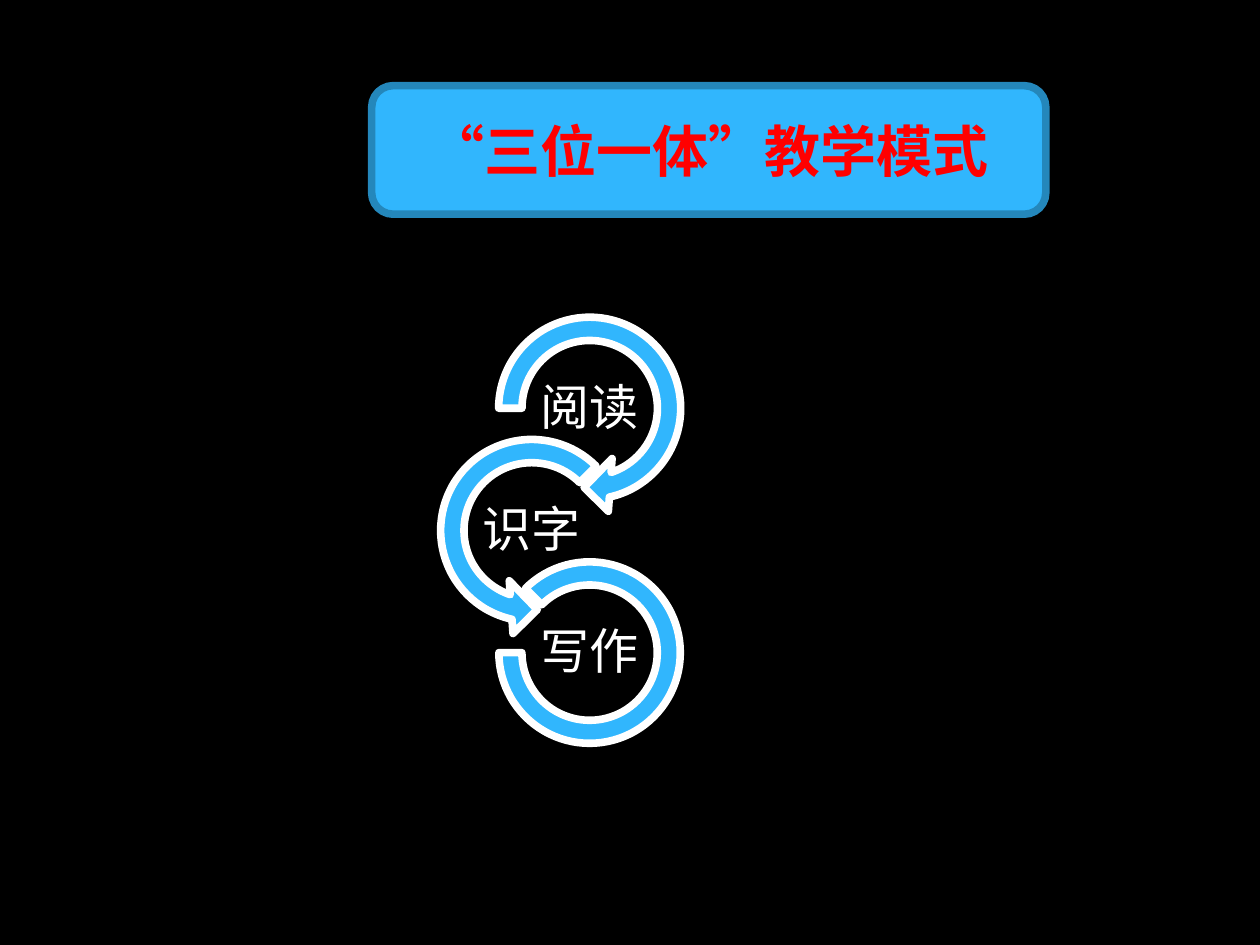
from pptx import Presentation
from pptx.dml.color import RGBColor
from pptx.enum import shapes, text
from pptx.util import Inches, Pt

BLACK = RGBColor(0x00, 0x00, 0x00)
WHITE = RGBColor(0xFF, 0xFF, 0xFF)
RED = RGBColor(0xFF, 0x00, 0x00)
SKY = RGBColor(0x31, 0xB6, 0xFD)
STEEL = RGBColor(0x24, 0x87, 0xBB)

OUTLINE = Pt(4.33)
LABEL_WIDTH, LABEL_HEIGHT = Inches(0.93), Inches(0.47)
STEP_GAP = Inches(0.97)

STEPS = [
    ("阅读", shapes.MSO_SHAPE.CIRCULAR_ARROW, Inches(4.68), Inches(1.68),
     [0.11, 11.42, 45, 108, 0.125]),
    ("识字", shapes.MSO_SHAPE.LEFT_CIRCULAR_ARROW, Inches(4.22), Inches(1.68),
     [0.11, 11.42, 63, 189, 0.125]),
    ("写作", shapes.MSO_SHAPE.BLOCK_ARC, Inches(4.68), Inches(1.44),
     [135, 108, 0.127]),
]


def add_filled_shape(slide, kind, box, line_color):
    shape = slide.shapes.add_shape(kind, *box)
    shape.shadow.inherit = False
    shape.fill.solid()
    shape.fill.fore_color.rgb = SKY
    shape.line.color.rgb = line_color
    shape.line.width = OUTLINE
    return shape


def format_text(frame, wording, font_name, size, color, bold=False):
    frame.text = wording
    frame.word_wrap = True
    frame.auto_size = text.MSO_AUTO_SIZE.NONE
    frame.vertical_anchor = text.MSO_ANCHOR.MIDDLE
    paragraph = frame.paragraphs[0]
    paragraph.alignment = text.PP_ALIGN.CENTER
    paragraph.font.name = font_name
    paragraph.font.size = Pt(size)
    paragraph.font.bold = bold
    paragraph.font.color.rgb = color
    return paragraph


def add_title_banner(slide, box):
    banner = add_filled_shape(slide, shapes.MSO_SHAPE.ROUNDED_RECTANGLE, box, STEEL)
    title = slide.shapes.title
    title.left, title.top, title.width, title.height = box
    format_text(title.text_frame, "“三位一体”教学模式", "Noto Sans CJK SC", 32, RED, True)
    banner._element.addnext(title._element)


def add_step_label(slide, wording, center_x, center_y):
    label = slide.shapes.add_textbox(
        center_x - LABEL_WIDTH // 2, center_y - LABEL_HEIGHT // 2,
        LABEL_WIDTH, LABEL_HEIGHT)
    frame = label.text_frame
    frame.margin_left = frame.margin_right = Inches(0.02)
    frame.margin_top = frame.margin_bottom = Inches(0.02)
    paragraph = format_text(frame, wording, "Cabin", 28, WHITE)
    paragraph.line_spacing = 0.9


def add_step_chain(slide, first_center_y):
    for index, (wording, kind, center_x, size, adjustments) in enumerate(STEPS):
        center_y = first_center_y + index * STEP_GAP
        ring_y = center_y - Inches(0.01)
        box = (center_x - size // 2, ring_y - size // 2, size, size)
        ring = add_filled_shape(slide, kind, box, WHITE)
        for position, value in enumerate(adjustments):
            ring.adjustments[position] = value
        add_step_label(slide, wording, center_x, center_y)


def main():
    presentation = Presentation()
    presentation.slide_width, presentation.slide_height = Inches(10), Inches(7.5)
    slide = presentation.slides.add_slide(presentation.slide_layouts[5])
    slide.background.fill.solid()
    slide.background.fill.fore_color.rgb = BLACK
    add_title_banner(slide, (Inches(2.95), Inches(0.68), Inches(5.35), Inches(1.02)))
    add_step_chain(slide, Inches(3.25))
    presentation.save("out.pptx")


if __name__ == "__main__":
    main()
